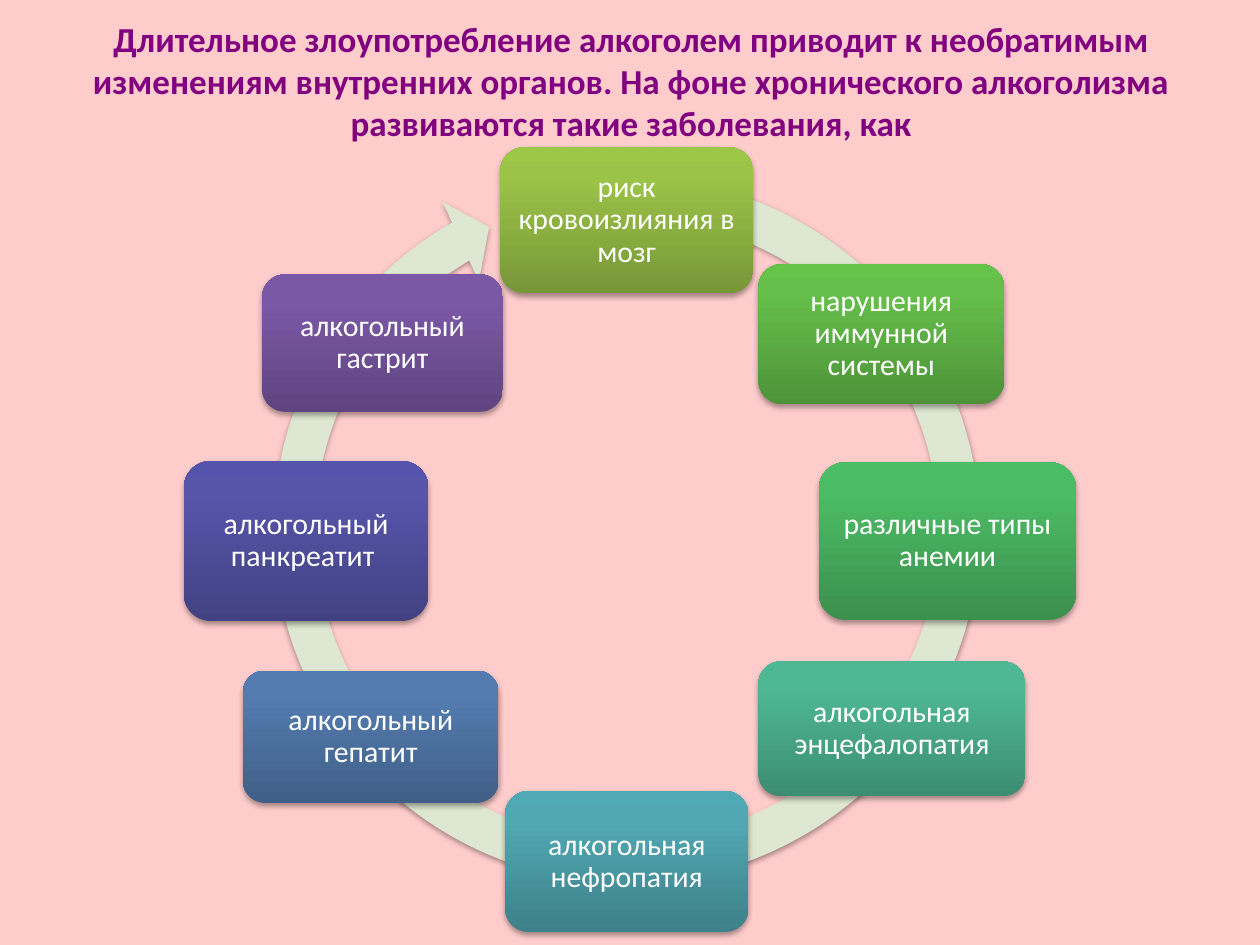
"""Build a slide showing a cycle of diseases caused by alcohol abuse."""
import copy

import lxml.etree
import pptx
import pptx.dml.color
import pptx.enum.shapes
import pptx.enum.text
import pptx.oxml.ns
import pptx.util

Pt = pptx.util.Pt
SHAPES = pptx.enum.shapes.MSO_SHAPE
CENTER = pptx.enum.text.PP_ALIGN.CENTER
MIDDLE = pptx.enum.text.MSO_ANCHOR.MIDDLE
qn = pptx.oxml.ns.qn


def color(value):
    return pptx.dml.color.RGBColor.from_string(value)


def add_shadowed_shape(slide, kind, bounds):
    shape = slide.shapes.add_shape(kind, *map(Pt, bounds))
    shape.line.fill.background()
    shape.shadow.inherit = False
    effects = shape._element.spPr.find(qn("a:effectLst"))
    shadow = lxml.etree.SubElement(
        effects, qn("a:outerShdw"), blurRad="40000", dist="23000", dir="5400000", rotWithShape="0"
    )
    black = lxml.etree.SubElement(shadow, qn("a:srgbClr"), val="000000")
    lxml.etree.SubElement(black, qn("a:alpha"), val="35000")
    return shape


deck = pptx.Presentation()
deck.slide_width, deck.slide_height = Pt(720), Pt(540)
slide = deck.slides.add_slide(deck.slide_layouts[5])
slide.background.fill.solid()
slide.background.fill.fore_color.rgb = color("FFCCCC")

title = slide.shapes.title
title.left, title.top, title.width, title.height = Pt(36.7), Pt(0), Pt(648), Pt(92)
title.text_frame.text = (
    "Длительное злоупотребление алкоголем приводит к необратимым изменениям внутренних органов. "
    "На фоне хронического алкоголизма развиваются такие заболевания, как"
)
title.text_frame.vertical_anchor = MIDDLE
heading = title.text_frame.paragraphs[0]
heading.alignment = CENTER
heading.font.name = "Calibri"
heading.font.size = Pt(20)
heading.font.bold = True
heading.font.color.rgb = color("800080")

ring = add_shadowed_shape(slide, SHAPES.CIRCULAR_ARROW, (143.3, 87.8, 429.8, 429.8))
ring.fill.solid()
ring.fill.fore_color.rgb = color("DEE7D1")
for index, value in enumerate((0.055, 3.307, 144.023, 170.154, 0.058)):
    ring.adjustments[index] = value

diseases = [
    ("риск кровоизлияния в мозг", (285.8, 84.2, 144.7, 83.5), ("779737", "9BC348", "9DC746")),
    ("нарушения иммунной системы", (433.4, 151, 140.4, 80), ("4E9339", "65BF4A", "64C348")),
    ("различные типы анемии", (468, 264.2, 146.9, 90), ("3B904D", "4CBB65", "4ABE64")),
    ("алкогольная энцефалопатия", (433.4, 378, 152.6, 77), ("3C8D72", "4EB794", "4DBA96")),
    ("алкогольная нефропатия", (288.7, 452, 139, 80.6), ("3E818A", "51A8B3", "4FAAB6")),
    ("алкогольный гепатит", (138.8, 383.2, 146.2, 75.6), ("405F87", "537BAF", "527CB1")),
    ("алкогольный панкреатит ", (105.1, 263.5, 139.7, 91.4), ("424283", "5655AA", "5554AD")),
    ("алкогольный гастрит", (149.8, 156.8, 137.5, 78.5), ("5F4480", "7B58A6", "7C57A8")),
]
for name, bounds, shades in diseases:
    box = add_shadowed_shape(slide, SHAPES.ROUNDED_RECTANGLE, bounds)
    box.fill.gradient()
    box.fill.gradient_angle = 90
    stop_list = box._element.spPr.find(".//" + qn("a:gsLst"))
    stop_list.append(copy.deepcopy(stop_list[0]))
    for stop, position, shade in zip(box.fill.gradient_stops, (0, 0.8, 1), shades):
        stop.position = position
        stop.color.rgb = color(shade)

    frame = box.text_frame
    frame.text = name
    frame.word_wrap = True
    frame.vertical_anchor = MIDDLE
    frame.margin_left = frame.margin_right = frame.margin_top = frame.margin_bottom = Pt(5)
    para = frame.paragraphs[0]
    para.alignment = CENTER
    para.line_spacing = 0.9
    para.font.name = "Calibri"
    para.font.size = Pt(17)
    para.font.color.rgb = color("FFFFFF")

deck.save("out.pptx")
